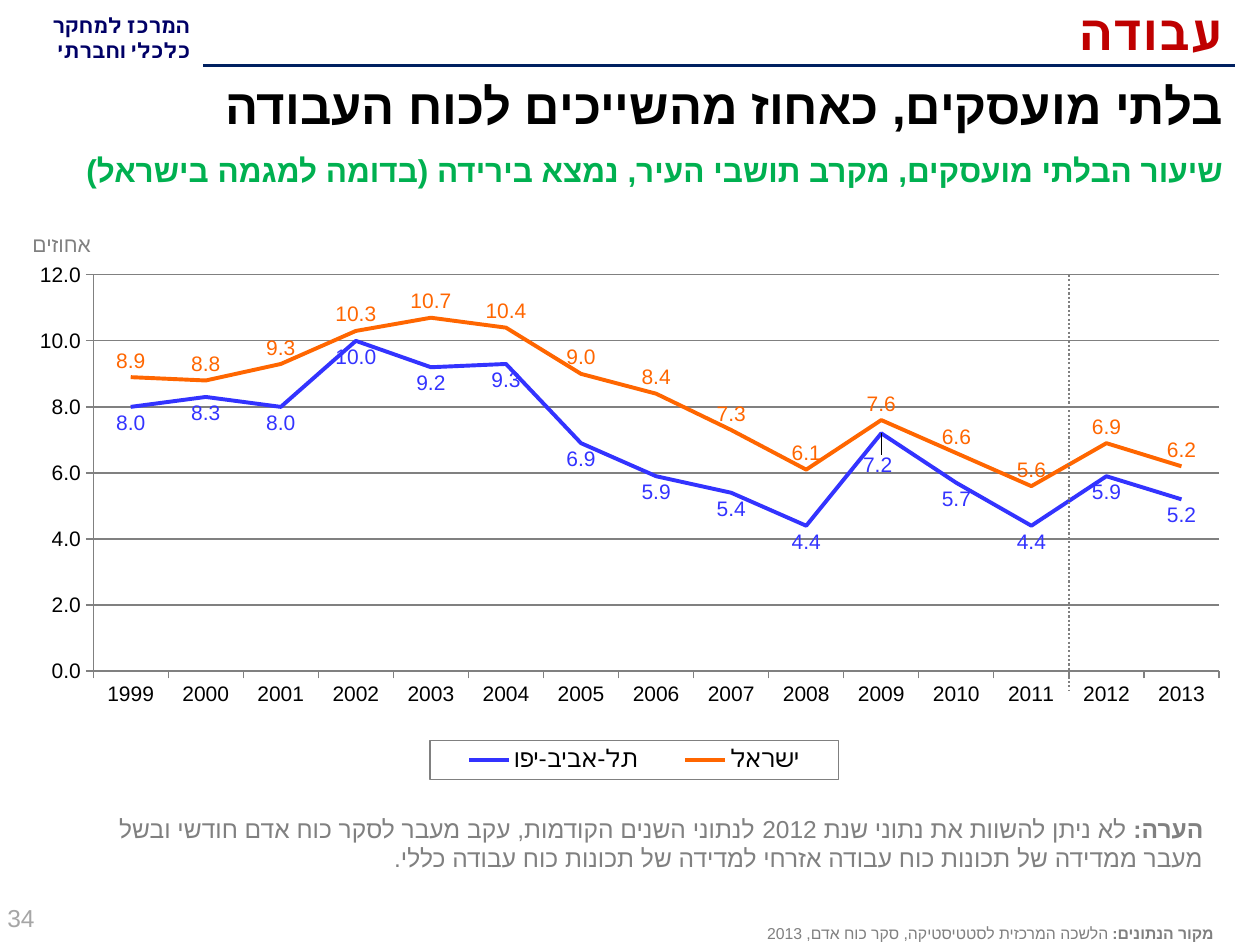
from lxml import etree
from pptx import Presentation
from pptx.chart.data import CategoryChartData
from pptx.dml.color import RGBColor
from pptx.enum.chart import XL_CHART_TYPE, XL_LABEL_POSITION, XL_LEGEND_POSITION, XL_MARKER_STYLE, XL_TICK_MARK
from pptx.enum.dml import MSO_LINE
from pptx.enum.shapes import MSO_CONNECTOR
from pptx.enum.text import MSO_ANCHOR, MSO_AUTO_SIZE, PP_ALIGN
from pptx.oxml.ns import qn
from pptx.util import Inches, Pt

LEFT, CENTER, RIGHT = PP_ALIGN.LEFT, PP_ALIGN.CENTER, PP_ALIGN.RIGHT
TOP, MIDDLE = MSO_ANCHOR.TOP, MSO_ANCHOR.MIDDLE
ABOVE, BELOW = XL_LABEL_POSITION.ABOVE, XL_LABEL_POSITION.BELOW
TICK_OUT = XL_TICK_MARK.OUTSIDE

SLIDE_W, SLIDE_H = 10, 7.5
COLORS = {
    "black": "000000", "gray": "808080", "light_gray": "A6A6A6",
    "navy": "002060", "center_name": "000066", "red": "BF0000", "green": "00B050",
    "tel_aviv": "3333FF", "israel": "FF6600",
}
YEARS = [str(year) for year in range(1999, 2014)]
RATES = [
    ("תל-אביב-יפו", "tel_aviv", BELOW,
     [8, 8.3, 8, 10, 9.2, 9.3, 6.9, 5.9, 5.4, 4.4, 7.2, 5.7, 4.4, 5.9, 5.2]),
    ("ישראל", "israel", ABOVE,
     [8.9, 8.8, 9.3, 10.3, 10.7, 10.4, 9, 8.4, 7.3, 6.1, 7.6, 6.6, 5.6, 6.9, 6.2]),
]
CHART_BOX = (0.18, 2.02, 9.65, 4.25)
PLOT = (0.058, 0.038, 0.926, 0.74)      # shares of the chart
LEGEND = (0.335, 0.908, 0.336, 0.072)   # shares of the chart
BREAK_YEAR = "2012"                     # first year of the new survey
SHIFTED_YEAR = "2009"                   # its label sits lower than the rest


def rgb(key):
    return RGBColor.from_string(COLORS[key])


def style_font(font, size, color, bold=False, face="Arial"):
    font.size, font.bold, font.name = Pt(size), bold, face
    font.color.rgb = rgb(color)


def fill_text(frame, lines, size, color, face="Arial", align=RIGHT, anchor=TOP):
    """Write right-to-left lines, each a list of (text, bold) runs."""
    frame.word_wrap = True
    frame.auto_size = MSO_AUTO_SIZE.NONE
    frame.vertical_anchor = anchor
    for i, runs in enumerate(lines):
        paragraph = frame.add_paragraph() if i else frame.paragraphs[0]
        paragraph.alignment = align
        paragraph._p.get_or_add_pPr().set("rtl", "1")
        for text, bold in runs:
            run = paragraph.add_run()
            run.text = text
            style_font(run.font, size, color, bold, face)
            etree.SubElement(run._r.get_or_add_rPr(), qn("a:cs"), typeface=face)


def add_text(slide, box, lines, size, color, **style):
    frame = slide.shapes.add_textbox(*map(Inches, box)).text_frame
    fill_text(frame, lines, size, color, **style)
    return frame


def add_line(slide, start, end, color, width, dash=None):
    line = slide.shapes.add_connector(MSO_CONNECTOR.STRAIGHT, *map(Inches, start + end))
    line.line.color.rgb = rgb(color)
    line.line.width = Pt(width)
    if dash:
        line.line.dash_style = dash
    etree.SubElement(line._element.spPr, qn("a:effectLst"))


def manual_layout(inner=False, modes=True, **shares):
    layout = etree.Element(qn("c:layout"))
    manual = etree.SubElement(layout, qn("c:manualLayout"))
    if inner:
        etree.SubElement(manual, qn("c:layoutTarget"), val="inner")
    if modes:
        for mode in ("xMode", "yMode"):
            etree.SubElement(manual, qn("c:" + mode), val="edge")
    for side, share in shares.items():
        etree.SubElement(manual, qn("c:" + side), val=str(share))
    return layout


def build_header(slide, box):
    left, top, width, height = box
    # Name of the research center
    center = add_text(slide, (left - 0.15, top + 0.05, 1.81, 0.51),
                      [[("המרכז למחקר", True)], [("כלכלי וחברתי", True)]],
                      12, "center_name", face="Calibri")
    center.margin_right = Inches(0.15)
    # Chapter title over its rule
    title = slide.shapes.title
    title.left, title.top, title.width, title.height = map(
        Inches, (left + 1.58, top - 0.03, 8.22, 0.55))
    fill_text(title.text_frame, [[("עבודה", True)]], 28, "red", face="Calibri", anchor=MIDDLE)
    rule_y = top + 0.52
    add_line(slide, (left + 0.98 * width, rule_y), (left + 1.61, rule_y), "navy", 2.25)
    # Headline and finding
    add_text(slide, (left + 0.09, top + 0.55, 9.71, 0.6),
             [[("בלתי מועסקים, כאחוז מהשייכים לכוח העבודה", True)]], 28, "black")
    add_text(slide, (left + 0.28, top + 1.15, 9.53, height - 1.15),
             [[("שיעור הבלתי מועסקים, מקרב תושבי העיר, נמצא בירידה (בדומה למגמה בישראל)", True)]],
             18, "green")


def style_series(series, color, position):
    series.smooth = False
    series.marker.style = XL_MARKER_STYLE.NONE
    series.format.line.color.rgb = rgb(color)
    series.format.line.width = Pt(2.25)
    labels = series.data_labels
    labels.show_value = True
    labels.position = position
    style_font(labels.font, 12, color)


def build_chart(slide, box):
    left, top, width, height = box
    data = CategoryChartData(number_format="0.0")
    data.categories = YEARS
    for name, _, _, values in RATES:
        data.add_series(name, values)
    chart = slide.shapes.add_chart(XL_CHART_TYPE.LINE, *map(Inches, box), data).chart
    chart.has_title = False
    style_font(chart.font, 14, "black")
    plot = chart.plots[0]
    plot.vary_by_categories = False
    for series, (_, color, position, _) in zip(plot.series, RATES):
        style_series(series, color, position)

    # The one label moved away from its line
    shifted = plot.series[0].points[YEARS.index(SHIFTED_YEAR)].data_label
    style_font(shifted.font, 12, "tel_aviv")
    shifted.position = BELOW
    label = plot.series[0].data_labels._element.find(qn("c:dLbl"))
    label.insert(1, manual_layout(modes=False, x=-0.003, y=0.03))

    # Axes
    for axis in (chart.category_axis, chart.value_axis):
        axis.major_tick_mark = TICK_OUT
        axis.minor_tick_mark = XL_TICK_MARK.NONE
        axis.format.line.color.rgb = rgb("gray")
        style_font(axis.tick_labels.font, 12, "black")
    rates = chart.value_axis
    rates.minimum_scale, rates.maximum_scale, rates.major_unit = 0, 12, 2
    rates.tick_labels.number_format = "0.0"
    rates.tick_labels.number_format_is_linked = False
    rates.major_gridlines.format.line.color.rgb = rgb("gray")

    # Plot area and framed legend
    area = chart._chartSpace.chart.plotArea
    for old in area.findall(qn("c:layout")):
        area.remove(old)
    area.insert(0, manual_layout(inner=True, **dict(zip("xywh", PLOT))))
    chart.has_legend = True
    legend = chart.legend
    legend.position = XL_LEGEND_POSITION.BOTTOM
    legend.include_in_layout = False
    style_font(legend.font, 14, "black")
    element = legend._element
    for old in element.findall(qn("c:layout")):
        element.remove(old)
    position = element.find(qn("c:legendPos"))
    position.addnext(manual_layout(**dict(zip("xywh", LEGEND))))
    frame = etree.Element(qn("c:spPr"))
    outline = etree.SubElement(frame, qn("a:ln"), w=str(Pt(0.75)))
    fill = etree.SubElement(outline, qn("a:solidFill"))
    etree.SubElement(fill, qn("a:srgbClr"), val=COLORS["gray"])
    element.find(qn("c:txPr")).addprevious(frame)

    # Unit of the value axis
    add_text(slide, (left - 0.46, top - 0.23, 1.54, 0.3),
             [[("אחוזים", False)]], 12, "gray", align=CENTER)
    # Break between the two surveys
    share = PLOT[0] + PLOT[2] * YEARS.index(BREAK_YEAR) / len(YEARS)
    break_x, break_y = left + width * share, top + height * PLOT[1]
    add_line(slide, (break_x, break_y), (break_x, break_y + 3.3), "gray", 1.25,
             MSO_LINE.ROUND_DOT)


def build_footer(slide, box):
    left, top, _, height = box
    # Remark on the data
    add_text(slide, (left + 0.83, top, 8.82, 0.57),
             [[("הערה: ", True),
               ("לא ניתן להשוות את נתוני שנת 2012 לנתוני השנים הקודמות, עקב מעבר לסקר כוח אדם "
                "חודשי ובשל מעבר ממדידה של תכונות כוח עבודה אזרחי למדידה של תכונות כוח עבודה "
                "כללי.", False)]], 14, "gray")
    # Slide number and data source
    add_text(slide, (left - 0.04, top + height - 0.44, 2.33, 0.44),
             [[("34", False)]], 14, "light_gray", align=LEFT, anchor=MIDDLE)
    add_text(slide, (left + 2.8, top + height - 0.22, 6.93, 0.25),
             [[("מקור הנתונים: ", True),
               ("הלשכה המרכזית לסטטיסטיקה, סקר כוח אדם, 2013", False)]], 9, "gray")


def main():
    deck = Presentation()
    deck.slide_width, deck.slide_height = Inches(SLIDE_W), Inches(SLIDE_H)
    slide = deck.slides.add_slide(deck.slide_layouts[5])
    build_header(slide, (0, 0, SLIDE_W, 1.77))
    build_chart(slide, CHART_BOX)
    build_footer(slide, (0, 6.41, SLIDE_W, SLIDE_H - 6.41))
    deck.save("out.pptx")


if __name__ == "__main__":
    main()
